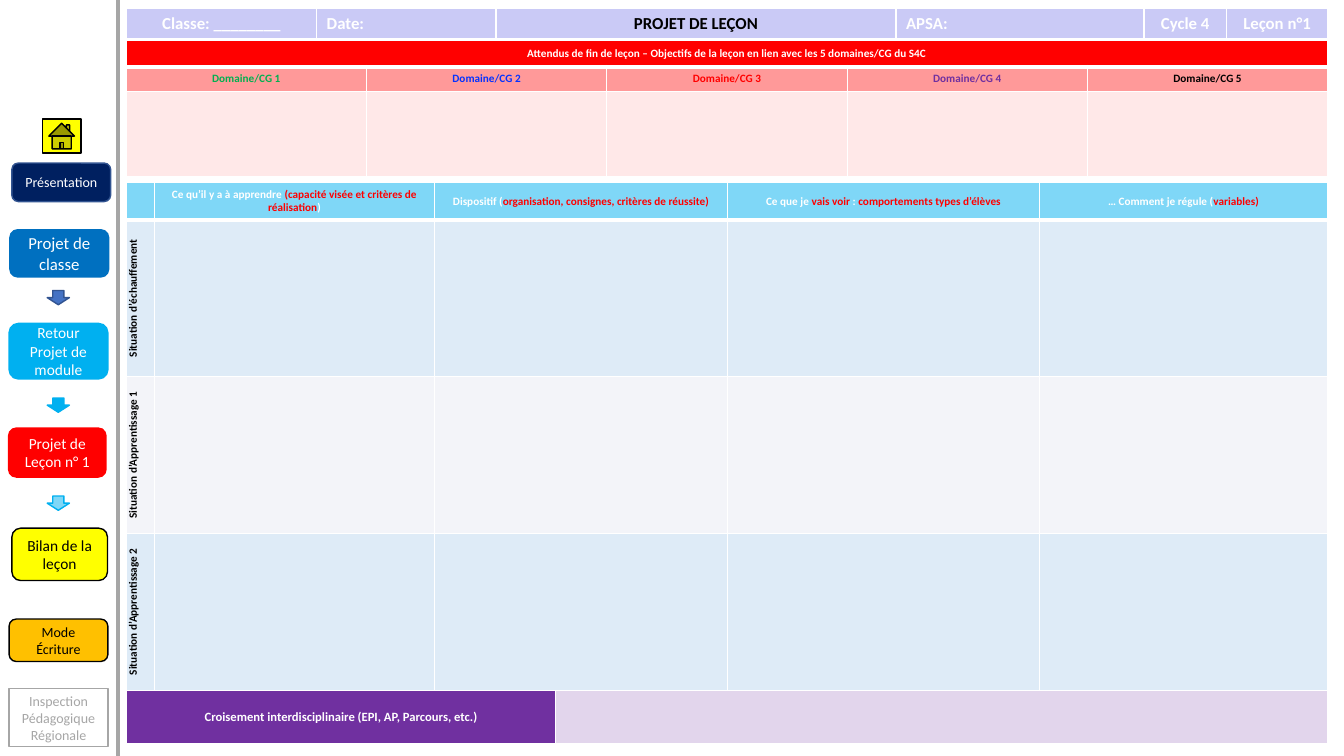
from lxml import etree
from pptx import Presentation
from pptx.dml.color import RGBColor
from pptx.enum import shapes, text
from pptx.oxml import ns
from pptx.util import Cm, Pt

COLORS = {
    "white": "FFFFFF", "black": "000000", "grey": "A6A6A6", "red": "FF0000",
    "yellow": "FFFF00", "orange": "FFC000", "navy": "002060", "steel": "325491",
    "blue": "0070C0", "indigo": "4472C4", "sky": "00B0F0", "lilac": "CACAF6",
    "purple": "7030A0", "green": "00B050", "royal": "0432FF",
    "pale_blue": "DEEBF7", "pale_grey": "E9EBF5",
}
FONT = "Calibri"
TABLE_LEFT = 3.18
TABLE_WIDTH = 30.28
SHAPE = shapes.MSO_SHAPE
CENTER, LEFT = text.PP_ALIGN.CENTER, text.PP_ALIGN.LEFT


def color(name):
    return RGBColor.from_string(COLORS[name])


def paint(fill, name, opacity=100):
    fill.solid()
    fill.fore_color.rgb = color(name)
    if opacity < 100:
        # The fill's own XML is the only place for transparency.
        srgb = fill._xPr.find(ns.qn("a:solidFill")).find(ns.qn("a:srgbClr"))
        etree.SubElement(srgb, ns.qn("a:alpha"), val=str(opacity * 1000))


def write(frame, runs, size=8, ink="white", bold=False, align=CENTER):
    """Fill a frame with one paragraph; runs is a string or (text, colour) pairs."""
    paragraph = frame.paragraphs[0]
    paragraph.alignment = align
    for words, name in [(runs, ink)] if isinstance(runs, str) else runs:
        run = paragraph.add_run()
        run.text = words
        run.font.name = FONT
        run.font.size = Pt(size)
        run.font.bold = bold
        run.font.color.rgb = color(name)


def add_block(slide, kind, box, fill, line=None, label="", size=10, ink="white", opacity=100):
    shape = slide.shapes.add_shape(kind, *(Cm(length) for length in box))
    shape.shadow.inherit = False
    paint(shape.fill, fill, opacity)
    if line:
        shape.line.color.rgb = color(line)
        shape.line.width = Pt(1)
    else:
        shape.line.fill.background()
    if label:
        shape.text_frame.word_wrap = True
        shape.text_frame.vertical_anchor = text.MSO_ANCHOR.MIDDLE
        write(shape.text_frame, label, size, ink)


def add_divider(slide):
    line = slide.shapes.add_connector(shapes.MSO_CONNECTOR.STRAIGHT, Cm(2.97), 0, Cm(2.97), Cm(19.05))
    line.line.color.rgb = color("grey")
    line.line.width = Pt(3)
    etree.SubElement(line._element.spPr, ns.qn("a:effectLst"))


def add_table(slide, top, columns, rows):
    frame = slide.shapes.add_table(len(rows), len(columns), Cm(TABLE_LEFT), Cm(top),
                                   Cm(TABLE_WIDTH), Cm(sum(rows)))
    table = frame.table
    table.first_row = table.horz_banding = False
    for column, width in zip(table.columns, columns):
        column.width = Cm(width)
    for row, height in zip(table.rows, rows):
        row.height = Cm(height)
    return table


def set_borders(cell, top=1, bottom=1):
    properties = cell._tc.get_or_add_tcPr()
    for side, width in (("L", 1), ("R", 1), ("T", top), ("B", bottom)):
        line = etree.SubElement(properties, ns.qn(f"a:ln{side}"), w=str(Pt(width)))
        fill = etree.SubElement(line, ns.qn("a:solidFill"))
        etree.SubElement(fill, ns.qn("a:srgbClr"), val=COLORS["white"])


def fill_row(table, index, fill, labels=(), opacity=100, header=False, below_header=False, **style):
    """Format one row and write its labels from the left; the rest stays empty."""
    for position, cell in enumerate(table.rows[index].cells):
        set_borders(cell, 3 if below_header else 1, 3 if header else 1)
        paint(cell.fill, fill, opacity)
        cell.vertical_anchor = text.MSO_ANCHOR.MIDDLE
        cell.margin_top = cell.margin_bottom = Cm(0.05)
        if position < len(labels) and labels[position]:
            write(cell.text_frame, labels[position], bold=True, **style)


def turn_upwards(cell):
    cell._tc.get_or_add_tcPr().set("vert", "vert270")
    cell.margin_left = cell.margin_right = cell.margin_top = cell.margin_bottom = 0


def add_navigation(slide):
    add_divider(slide)
    add_block(slide, SHAPE.RECTANGLE, (0.23, 17.35, 2.49, 1.47), "white", "grey",
              "Inspection Pédagogique Régionale", ink="grey")
    add_block(slide, SHAPE.ACTION_BUTTON_HOME, (1.07, 3, 0.97, 0.86), "yellow", "black")
    buttons = [
        ((0.3, 4.11, 2.49, 0.97), "navy", "steel", "Présentation", 10, "white"),
        ((0.25, 5.79, 2.49, 1.19), "blue", "blue", "Projet de classe", 12, "white"),
        ((0.23, 8.15, 2.49, 1.4), "sky", "sky", "Retour Projet de module", 11, "white"),
        ((0.2, 10.77, 2.49, 1.27), "red", None, "Projet de Leçon n° 1", 11, "white"),
        ((0.3, 13.31, 2.41, 1.32), "yellow", "black", "Bilan de la leçon", 11, "black"),
        ((0.23, 15.6, 2.49, 1.07), "orange", "black", "Mode Écriture", 10, "black"),
    ]
    for button in buttons:
        add_block(slide, SHAPE.ROUNDED_RECTANGLE, *button)
    for top, fill, line, opacity in ((7.32, "indigo", "steel", 100), (10.03, "sky", "sky", 100),
                                     (12.5, "sky", "sky", 50)):
        add_block(slide, SHAPE.DOWN_ARROW, (1.19, top, 0.56, 0.36), fill, line, opacity=opacity)


def add_lesson_heading(slide):
    table = add_table(slide, 0.2, (4.8, 4.52, 10.08, 6.25, 2.08, 2.55), (0.81,))
    labels = ["Classe: ________", "Date:", [("PROJET DE LEÇON", "black")], "APSA:", "Cycle 4", "Leçon n°1"]
    fill_row(table, 0, "lilac", labels, header=True, size=12)
    for column in (1, 3):
        table.cell(0, column).text_frame.paragraphs[0].alignment = LEFT


def add_goals(slide):
    inks = ("green", "royal", "red", "purple", "black")
    table = add_table(slide, 1.02, [TABLE_WIDTH / len(inks)] * len(inks), (0.66, 0.62, 2.16))
    fill_row(table, 0, "red",
             ["Attendus de fin de leçon – Objectifs de la leçon en lien avec les 5 domaines/CG du S4C"],
             header=True)
    table.cell(0, 0).merge(table.cell(0, len(inks) - 1))
    domains = [[(f"Domaine/CG {number}", ink)] for number, ink in enumerate(inks, 1)]
    fill_row(table, 1, "red", domains, opacity=40, below_header=True)
    fill_row(table, 2, "red", opacity=9)


def add_crossing(slide):
    table = add_table(slide, 17.37, (10.82, 19.46), (1.4,))
    fill_row(table, 0, "purple", ["Croisement interdisciplinaire (EPI, AP, Parcours, etc.)"],
             header=True, size=9)
    paint(table.cell(0, 1).fill, "purple", 20)


def add_situations(slide):
    table = add_table(slide, 4.6, (0.71, 7.06, 7.39, 7.85, 7.27), (0.94, 3.95, 3.95, 3.95))
    headings = [
        "",
        [("Ce qu’il y a à apprendre ", "white"),
         ("(capacité visée et critères de réalisation", "red"), (")", "white")],
        [("Dispositif (", "white"), ("organisation, consignes, critères de réussite)", "red")],
        [("Ce que je ", "white"), ("vais voir ", "red"), (": ", "white"),
         ("comportements types d’élèves", "red")],
        [("… Comment je régule (", "white"), ("variables)", "red")],
    ]
    fill_row(table, 0, "sky", headings, opacity=50, header=True)
    situations = [("Situation d’échauffement", "pale_blue", 100),
                  ("Situation d’Apprentissage 1", "pale_grey", 50),
                  ("Situation d’Apprentissage 2", "pale_blue", 100)]
    for index, (label, fill, opacity) in enumerate(situations, 1):
        fill_row(table, index, fill, [label], opacity, below_header=index == 1, ink="black")
        turn_upwards(table.cell(index, 0))


def main():
    presentation = Presentation()
    presentation.slide_width, presentation.slide_height = Cm(33.87), Cm(19.05)
    slide = presentation.slides.add_slide(presentation.slide_layouts.get_by_name("Blank"))
    add_navigation(slide)
    add_lesson_heading(slide)
    add_goals(slide)
    add_crossing(slide)
    add_situations(slide)
    presentation.save("out.pptx")


if __name__ == "__main__":
    main()
